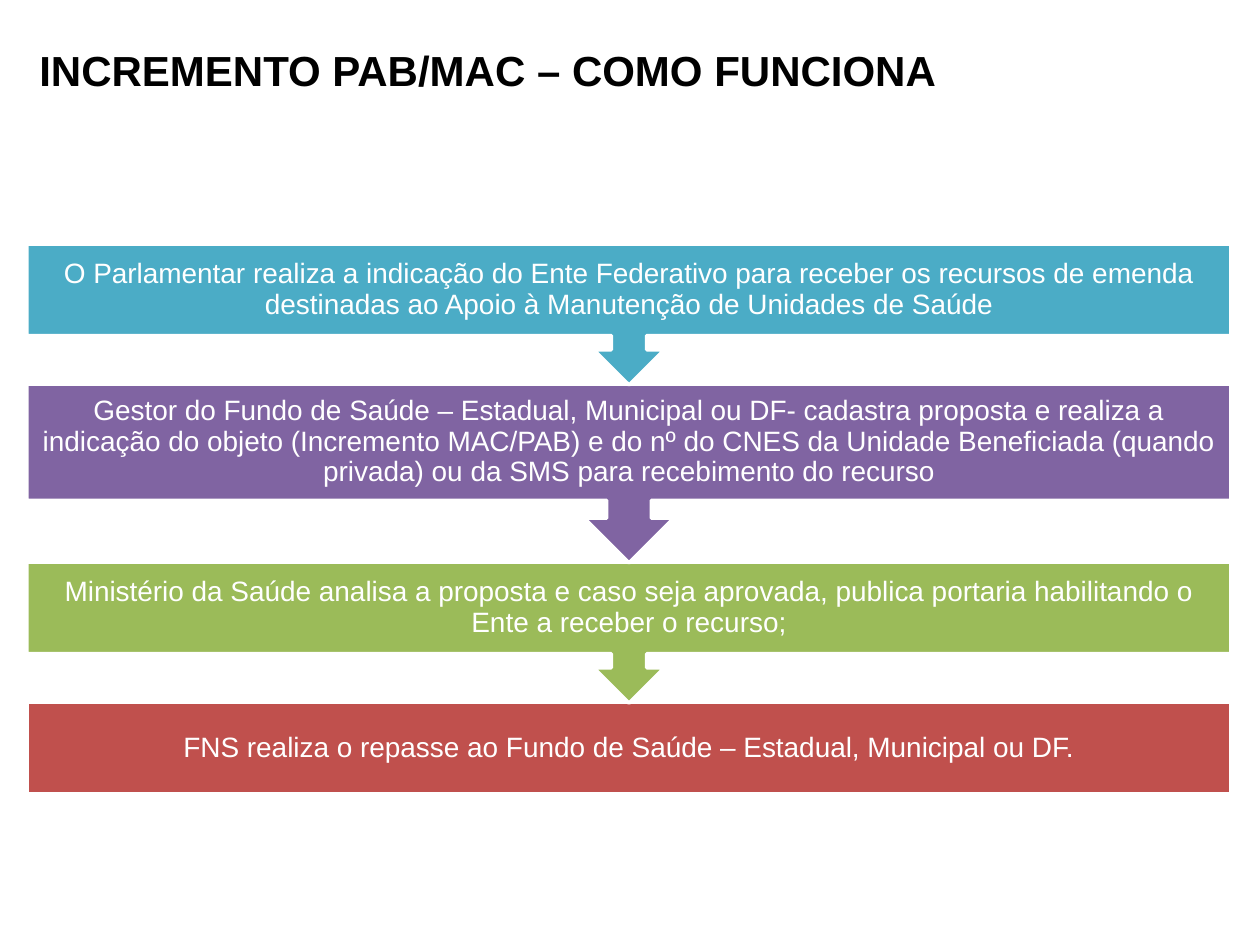
from pptx import Presentation
from pptx.dml.color import RGBColor
from pptx.enum.shapes import MSO_SHAPE
from pptx.enum.text import MSO_ANCHOR, PP_ALIGN
from pptx.util import Pt

PX = 914400 / 126
RECTANGLE = MSO_SHAPE.RECTANGLE
CALLOUT = MSO_SHAPE.UP_ARROW_CALLOUT
MIDDLE = MSO_ANCHOR.MIDDLE
CENTER = PP_ALIGN.CENTER
COLORS = {
    "blue": "4BACC6",
    "purple": "8064A2",
    "green": "9BBB59",
    "red": "C0504D",
    "white": "FFFFFF",
    "black": "000000",
}
LEFT = 27
STEP_WIDTH = 1204
INSET = 15


def color(name):
    return RGBColor.from_string(COLORS[name])


def add_text(slide, box, text, size, color_name):
    text_box = slide.shapes.add_textbox(*[round(value * PX) for value in box])
    text_box.text_frame.word_wrap = True
    paragraph = text_box.text_frame.paragraphs[0]
    paragraph.text = text
    paragraph.font.name = "Arial"
    paragraph.font.size = Pt(size)
    paragraph.font.color.rgb = color(color_name)
    return text_box.text_frame, paragraph


presentation = Presentation()
presentation.slide_width = round(1260 * PX)
presentation.slide_height = round(945 * PX)
slide = presentation.slides.add_slide(presentation.slide_layouts[6])

steps = [
    (702, 92, 92, RECTANGLE, "red",
     "FNS realiza o repasse ao Fundo de Saúde – Estadual, Municipal ou DF."),
    (562, 141, 92, CALLOUT, "green",
     "Ministério da Saúde analisa a proposta e caso seja aprovada, publica "
     "portaria habilitando o Ente a receber o recurso;"),
    (384, 179, 116, CALLOUT, "purple",
     "Gestor do Fundo de Saúde – Estadual, Municipal ou DF- cadastra proposta "
     "e realiza a indicação do objeto (Incremento MAC/PAB) e do nº do CNES da "
     "Unidade Beneficiada (quando privada) ou da SMS para recebimento do recurso"),
    (244, 141, 92, CALLOUT, "blue",
     "O Parlamentar realiza a indicação do Ente Federativo para receber os "
     "recursos de emenda destinadas ao Apoio à Manutenção de Unidades de Saúde"),
]

for top, height, text_height, kind, fill, text in steps:
    box = (LEFT, top, STEP_WIDTH, height)
    shape = slide.shapes.add_shape(kind, *[round(value * PX) for value in box])
    shape.shadow.inherit = False
    shape.fill.solid()
    shape.fill.fore_color.rgb = color(fill)
    shape.line.color.rgb = color("white")
    shape.line.width = Pt(2)
    if kind == CALLOUT:
        shape.rotation = 180

    frame, paragraph = add_text(
        slide, (LEFT, top, STEP_WIDTH, text_height), text, 16, "white")
    frame.vertical_anchor = MIDDLE
    frame.margin_left = frame.margin_right = round(INSET * PX)
    frame.margin_top = frame.margin_bottom = round(INSET * PX)
    paragraph.alignment = CENTER
    paragraph.line_spacing = 0.9

frame, paragraph = add_text(
    slide, (LEFT, 38, 942, 63), "INCREMENTO PAB/MAC – COMO FUNCIONA", 24, "black")
paragraph.font.bold = True

presentation.save("out.pptx")
